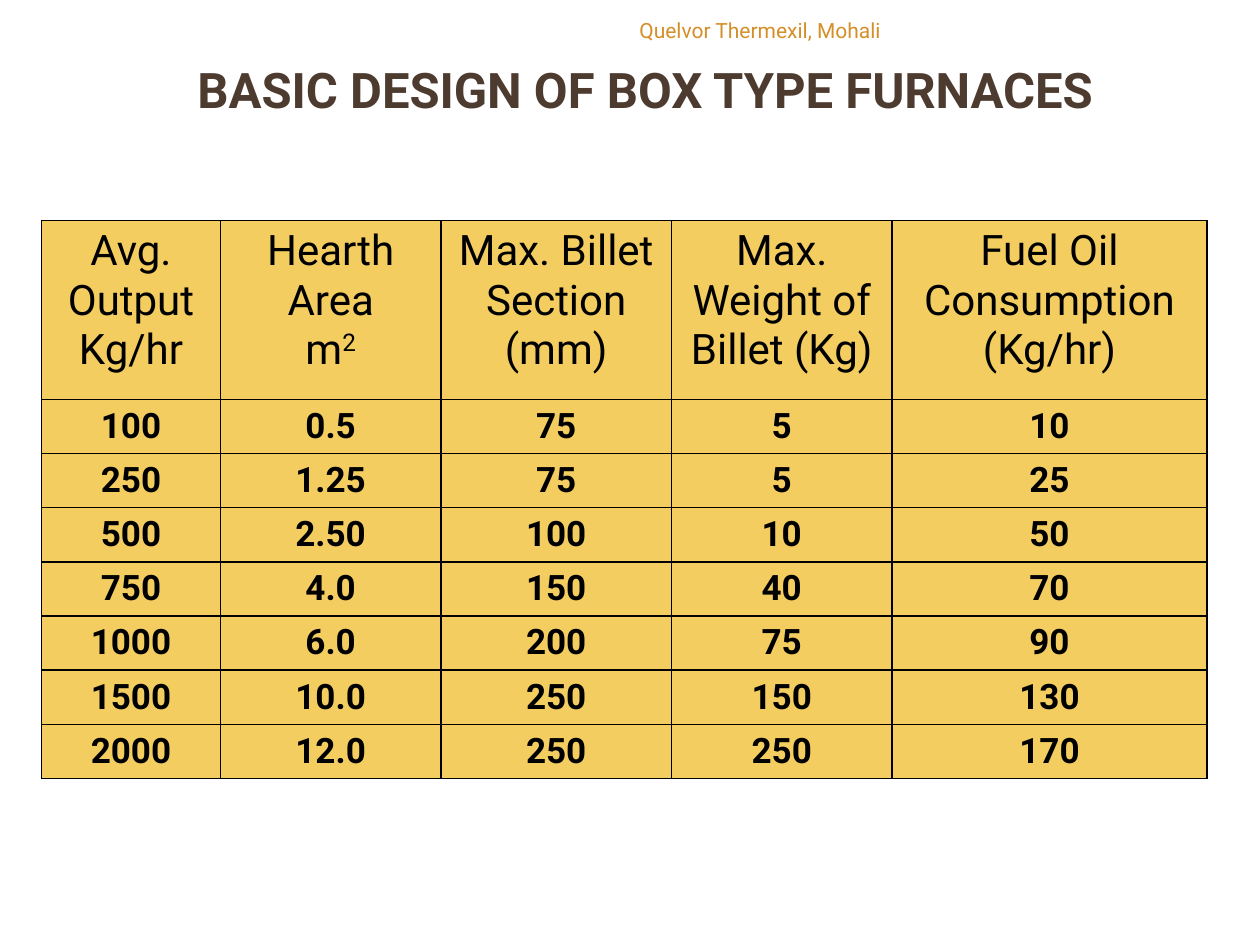
from dataclasses import dataclass

from lxml.etree import SubElement
from pptx import Presentation
from pptx.dml.color import RGBColor
from pptx.enum.text import MSO_ANCHOR, PP_ALIGN
from pptx.oxml.ns import qn
from pptx.slide import Slide
from pptx.table import _Cell
from pptx.text.text import _Paragraph
from pptx.util import Inches, Pt

COLORS = {"title": "4E3B30", "company": "D48F29", "cell": "F3CD60", "ink": "000000"}
FONT = "Roboto"


@dataclass(frozen=True)
class Style:
    """Look of a paragraph."""

    size: int
    color: str
    bold: bool = False
    align: PP_ALIGN = PP_ALIGN.CENTER


@dataclass(frozen=True)
class Label:
    """A line of text in a box measured in inches."""

    text: str
    left: float
    top: float
    width: float
    height: float
    style: Style


@dataclass(frozen=True)
class Column:
    """A table column with its heading lines and values."""

    width: float
    heading: tuple[str, ...]
    values: tuple[str, ...]
    superscript: str = ""


LABELS = [
    Label("BASIC DESIGN OF BOX TYPE FURNACES", 0.58, 0.42, 9.08, 0.57,
          Style(28, "title", bold=True)),
    Label("Quelvor Thermexil, Mohali", 3.42, 0.08, 3.67, 0.32,
          Style(12, "company", align=PP_ALIGN.RIGHT)),
]
COLUMNS = [
    Column(1.42, ("Avg. Output", "Kg/hr"),
           ("100", "250", "500", "750", "1000", "1500", "2000")),
    Column(1.75, ("Hearth Area", "m"),
           ("0.5", "1.25", "2.50", "4.0", "6.0", "10.0", "12.0"), superscript="2"),
    Column(1.83, ("Max. Billet Section (mm)",),
           ("75", "75", "100", "150", "200", "250", "250")),
    Column(1.75, ("Max. Weight of Billet (Kg)",),
           ("5", "5", "10", "40", "75", "150", "250")),
    Column(2.5, ("Fuel Oil Consumption", "(Kg/hr)"),
           ("10", "25", "50", "70", "90", "130", "170")),
]
HEADING = Style(24, "ink")
VALUE = Style(20, "ink", bold=True)
TABLE_LEFT, TABLE_TOP = 0.33, 1.75
HEADING_HEIGHT, VALUE_HEIGHT = 1.42, 0.43


def apply_style(paragraph: _Paragraph, style: Style) -> None:
    """Set the font and alignment of a paragraph."""
    paragraph.alignment = style.align
    paragraph.font.name = FONT
    paragraph.font.size = Pt(style.size)
    paragraph.font.bold = style.bold
    paragraph.font.color.rgb = RGBColor.from_string(COLORS[style.color])


def add_label(slide: Slide, label: Label) -> None:
    """Place a single line of text on the slide."""
    box = slide.shapes.add_textbox(
        Inches(label.left), Inches(label.top), Inches(label.width), Inches(label.height))
    frame = box.text_frame
    frame.word_wrap = True
    frame.vertical_anchor = MSO_ANCHOR.MIDDLE
    frame.text = label.text
    apply_style(frame.paragraphs[0], label.style)


def add_borders(cell: _Cell) -> None:
    """Outline all four sides of a cell."""
    properties = cell._tc.get_or_add_tcPr()
    for position, side in enumerate(("a:lnL", "a:lnR", "a:lnT", "a:lnB")):
        line = SubElement(properties, qn(side), w=str(Pt(1)))
        fill = SubElement(line, qn("a:solidFill"))
        SubElement(fill, qn("a:srgbClr"), val=COLORS["ink"])
        properties.insert(position, line)


def fill_cell(cell: _Cell, lines: tuple[str, ...], style: Style) -> None:
    """Write styled lines into a filled and bordered cell."""
    cell.fill.solid()
    cell.fill.fore_color.rgb = RGBColor.from_string(COLORS["cell"])
    add_borders(cell)
    cell.text = "\n".join(lines)
    for paragraph in cell.text_frame.paragraphs:
        apply_style(paragraph, style)


def add_superscript(paragraph: _Paragraph, text: str) -> None:
    """Append raised text to a paragraph."""
    run = paragraph.add_run()
    run.text = text
    run._r.get_or_add_rPr().set("baseline", "30000")


def add_furnace_table(slide: Slide, columns: list[Column]) -> None:
    """Draw the furnace table column by column."""
    value_count = len(columns[0].values)
    table = slide.shapes.add_table(
        value_count + 1, len(columns), Inches(TABLE_LEFT), Inches(TABLE_TOP),
        Inches(sum(column.width for column in columns)),
        Inches(HEADING_HEIGHT + value_count * VALUE_HEIGHT)).table
    for index, row in enumerate(table.rows):
        row.height = Inches(VALUE_HEIGHT if index else HEADING_HEIGHT)
    for index, column in enumerate(columns):
        table.columns[index].width = Inches(column.width)
        heading = table.cell(0, index)
        fill_cell(heading, column.heading, HEADING)
        if column.superscript:
            add_superscript(heading.text_frame.paragraphs[-1], column.superscript)
        for row_index, value in enumerate(column.values, start=1):
            fill_cell(table.cell(row_index, index), (value,), VALUE)


def main() -> None:
    """Build and save the slide."""
    presentation = Presentation()
    presentation.slide_width = Inches(10)
    presentation.slide_height = Inches(7.5)
    slide = presentation.slides.add_slide(presentation.slide_layouts[6])
    add_furnace_table(slide, COLUMNS)
    for label in LABELS:
        add_label(slide, label)
    presentation.save("out.pptx")


if __name__ == "__main__":
    main()
